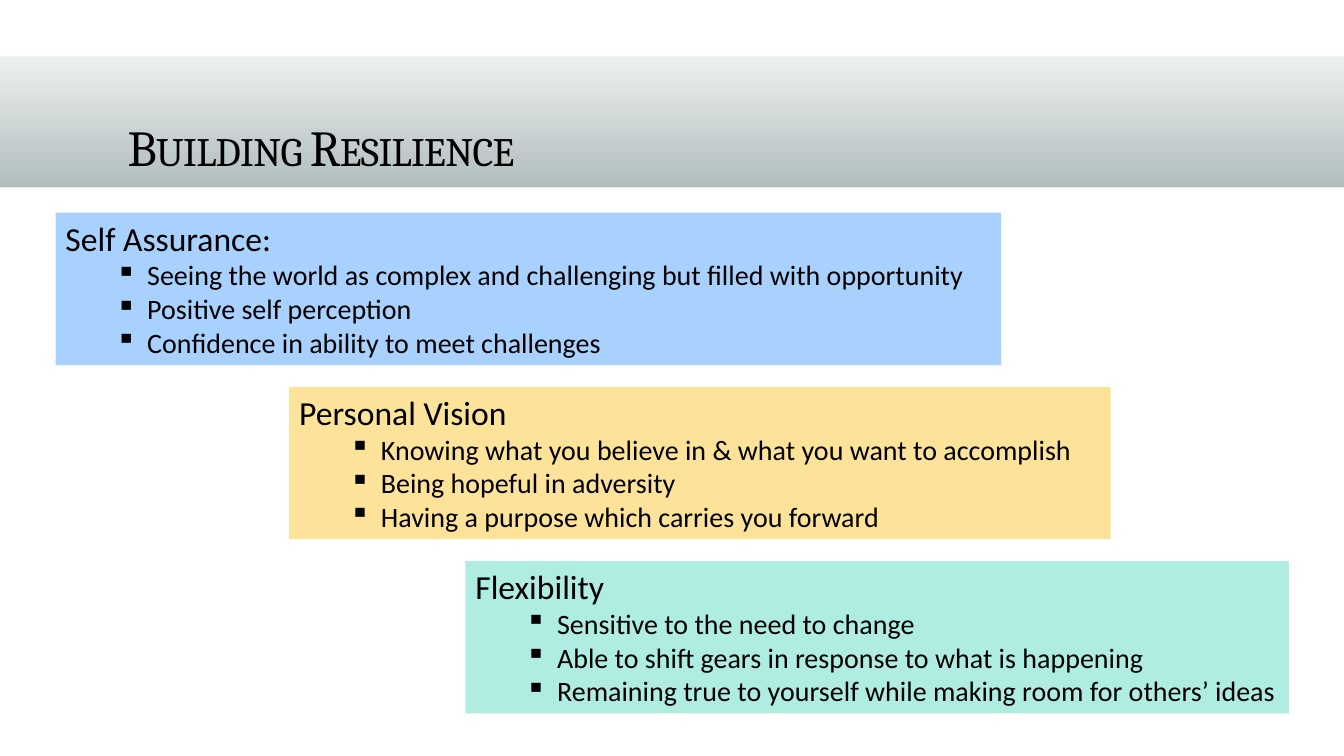
from dataclasses import dataclass

from lxml.etree import SubElement
from pptx import Presentation
from pptx.dml.color import RGBColor
from pptx.enum.shapes import MSO_SHAPE
from pptx.enum.text import MSO_ANCHOR, PP_ALIGN
from pptx.oxml.ns import qn
from pptx.util import Cm, Pt


@dataclass(frozen=True)
class Theme:
    ink: str = "000000"
    white: str = "FFFFFF"
    light: str = "EFF2F2"
    dark: str = "B0BCBC"
    blue: str = "A9D1FE"
    gold: str = "FDE399"
    mint: str = "AFEDE3"
    serif: str = "Cambria"
    sans: str = "Calibri"
    title: int = 36
    head: int = 24
    item: int = 20


class Deck:
    def __init__(self, theme):
        self.theme = theme
        self.show = Presentation()
        self.show.slide_width = Cm(33.87)
        self.show.slide_height = Cm(19.05)
        self.slide = self.show.slides.add_slide(self.show.slide_layouts[6])

    def rect(self, x, y, w, h, color):
        box = self.slide.shapes.add_shape(
            MSO_SHAPE.RECTANGLE, Cm(x), Cm(y), Cm(w), Cm(h))
        box.shadow.inherit = False
        box.line.fill.background()
        box.fill.solid()
        box.fill.fore_color.rgb = RGBColor.from_string(color)
        return box

    def band(self, x, y, w, h, colors):
        fill = self.rect(x, y, w, h, colors[0]).fill
        fill.gradient()
        fill.gradient_angle = 270
        for stop, color in zip(fill.gradient_stops, colors):
            stop.color.rgb = RGBColor.from_string(color)

    def style(self, para, face, size):
        para.alignment = PP_ALIGN.LEFT
        para.font.name = face
        para.font.size = Pt(size)
        para.font.color.rgb = RGBColor.from_string(self.theme.ink)

    def title(self, x, y, w, h, text):
        frame = self.slide.shapes.add_textbox(
            Cm(x), Cm(y), Cm(w), Cm(h)).text_frame
        frame.word_wrap = True
        frame.vertical_anchor = MSO_ANCHOR.BOTTOM
        para = frame.paragraphs[0]
        para.line_spacing = 0.9
        run = para.add_run()
        run.text = text
        # Small caps, set slightly tight
        props = run._r.get_or_add_rPr()
        props.set("cap", "small")
        props.set("spc", "-50")
        self.style(para, self.theme.serif, self.theme.title)

    def bullet(self, para):
        props = para._p.get_or_add_pPr()
        props.set("marL", str(Cm(2.06)))
        props.set("indent", str(-Cm(0.79)))
        SubElement(props, qn("a:buChar")).set("char", "▪")

    def card(self, x, y, w, h, color, head, items):
        frame = self.rect(x, y, w, h, color).text_frame
        frame.word_wrap = True
        frame.vertical_anchor = MSO_ANCHOR.TOP
        first = frame.paragraphs[0]
        first.text = head
        self.style(first, self.theme.sans, self.theme.head)
        for item in items:
            para = frame.add_paragraph()
            para.text = item
            para.level = 1
            self.bullet(para)
            self.style(para, self.theme.sans, self.theme.item)


def main():
    theme = Theme()
    deck = Deck(theme)

    # Title band with its white edges
    deck.band(0, 1.27, 33.87, 3.53, (theme.light, theme.dark))
    for y in (4.72, 1.27):
        deck.rect(0, y, 33.87, 0.15, theme.white)
    deck.title(2.97, 1.55, 27.94, 3.05, "Building Resilience")

    # Stepped cards
    cards = [
        (1.4, 23.83, theme.blue, "Self Assurance:", [
            "Seeing the world as complex and challenging but filled "
            "with opportunity",
            "Positive self perception",
            "Confidence in ability to meet challenges"]),
        (7.29, 20.7, theme.gold, "Personal Vision", [
            "Knowing what you believe in & what you want to accomplish",
            "Being hopeful in adversity",
            "Having a purpose which carries you forward"]),
        (11.73, 20.75, theme.mint, "Flexibility", [
            "Sensitive to the need to change",
            "Able to shift gears in response to what is happening",
            "Remaining true to yourself while making room for "
            "others’ ideas"]),
    ]
    for i, (x, w, color, head, items) in enumerate(cards):
        deck.card(x, 5.36 + i * 4.39, w, 3.84, color, head, items)

    deck.show.save("out.pptx")


if __name__ == "__main__":
    main()
